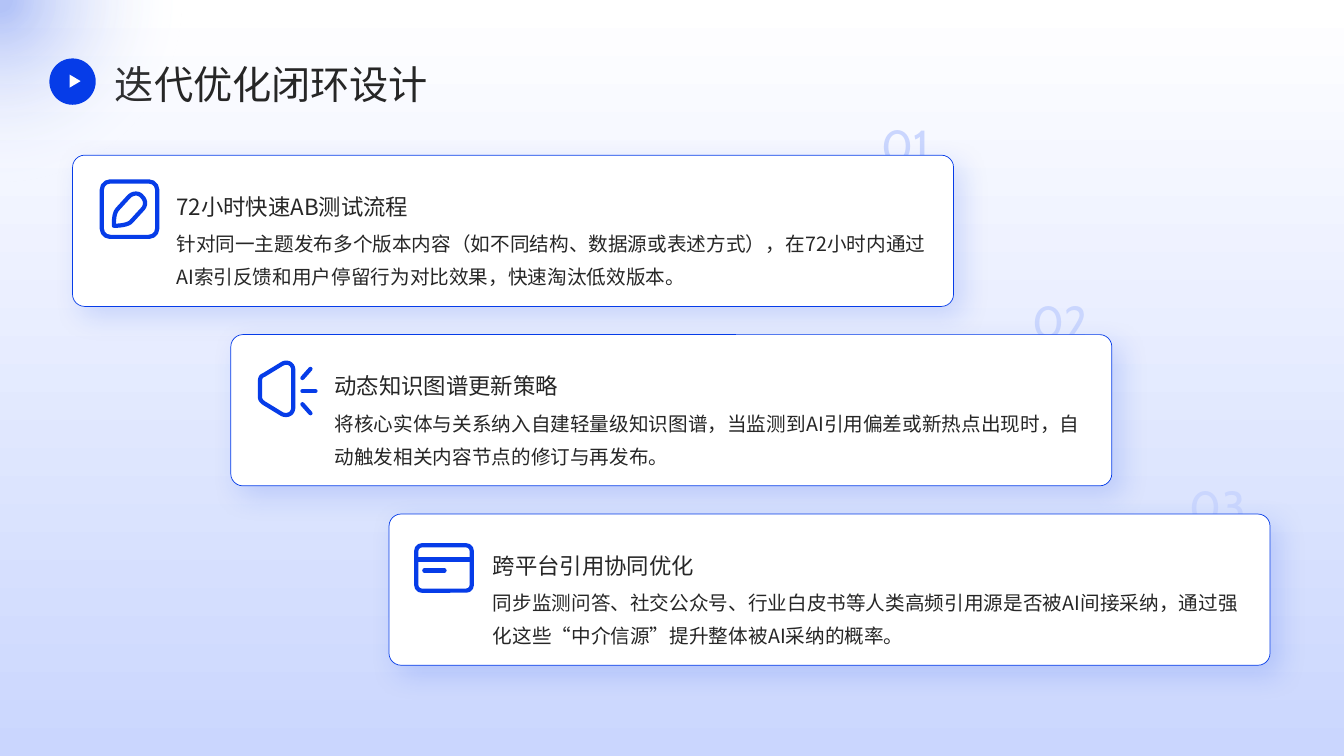
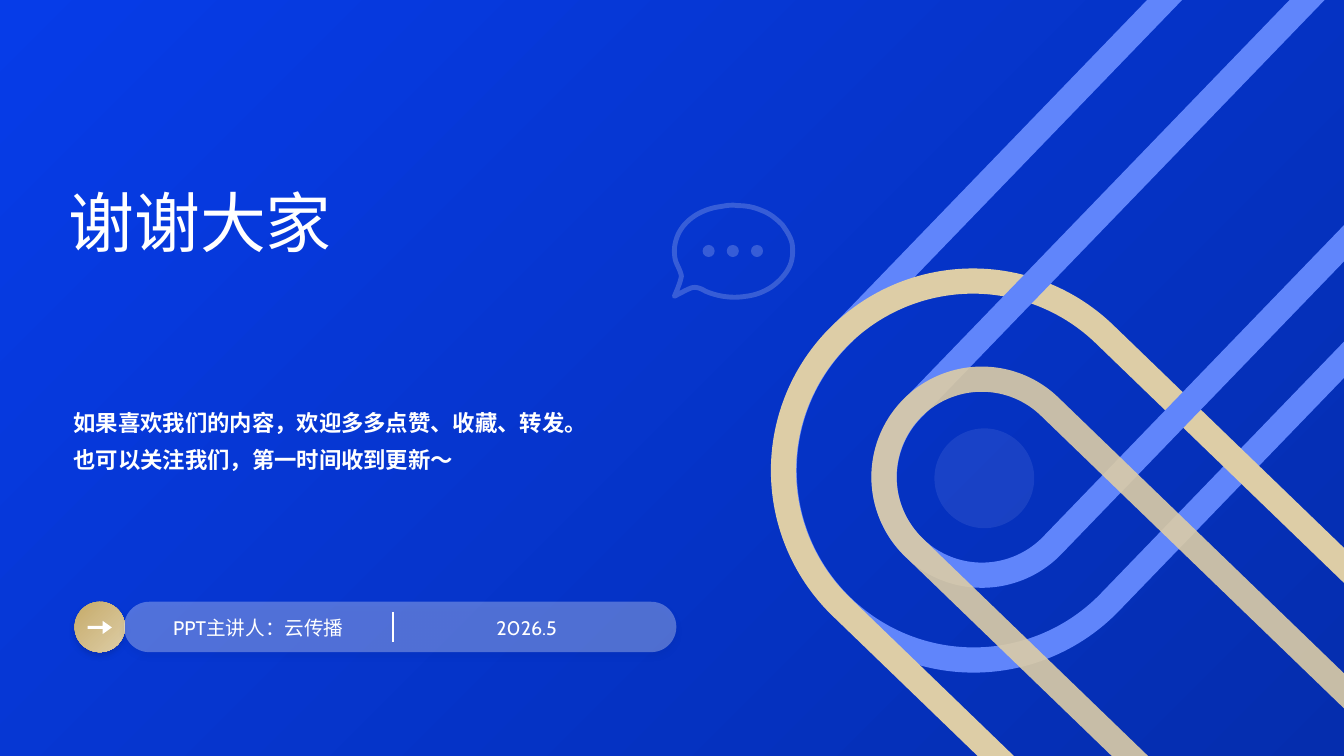
from lxml import etree
from pptx import Presentation
from pptx import util as u
from pptx.dml.color import RGBColor
from pptx.enum import shapes, text
from pptx.enum.lang import MSO_LANGUAGE_ID
from pptx.oxml import parse_xml
from pptx.oxml.ns import nsdecls, qn

BLUE, NAVY, SKY, PALE = "063CE8", "052DAE", "6085FB", "CAD6FE"
GOLD, BRONZE, SHADE = "DDCDA6", "C6AB6A", "031E74"
WHITE, INK = "FFFFFF", "262626"
CJK, LATIN = "Noto Sans CJK SC", "Cabin"
MS, AL, AN = shapes.MSO_SHAPE, text.PP_ALIGN, text.MSO_ANCHOR
CARD_SHADOW = (BLUE, 15, 20, 8, 45)
PILL_SHADOW = (SHADE, 25, 4, 3, 90)

CARD = (72, 154, 874, 150)
CARD_STEP = (157, 178)
CARDS = [
    {"no": "01", "no_top": 113, "title": "72小时快速AB测试流程",
     "body": "针对同一主题发布多个版本内容（如不同结构、数据源或表述方式），在72小时内通过AI索引反馈和用户停留行为对比效果，快速淘汰低效版本。",
     "frame": (29, 26, 55, 55, 0.15),
     "outline": [(41, 70), (41, 65, 41, 57, 45, 53), (56, 41), (60, 37, 66, 37, 69, 41),
                 (73, 45, 73, 50, 69, 54), (58, 66), (55, 69, 47, 70, 41, 70)]},
    {"no": "02", "no_top": 288, "title": "动态知识图谱更新策略",
     "body": "将核心实体与关系纳入自建轻量级知识图谱，当监测到AI引用偏差或新热点出现时，自动触发相关内容节点的修订与再发布。",
     "outline": [(33, 40), (51, 29), (56, 26, 62, 29, 62, 35), (62, 72),
                 (62, 79, 56, 81, 51, 79), (33, 68), (30, 66, 29, 64, 29, 62),
                 (29, 46), (29, 43, 30, 41, 33, 40)],
     "strokes": [(71, 69, 79, 78), (71, 56, 84, 56), (71, 43, 79, 34)]},
    {"no": "03", "no_top": 471, "title": "跨平台引用协同优化",
     "body": "同步监测问答、社交公众号、行业白皮书等人类高频引用源是否被AI间接采纳，通过强化这些“中介信源”提升整体被AI采纳的概率。",
     "frame": (27, 31, 55, 45, 0.12),
     "strokes": [(29, 45, 80, 45), (35, 56, 55, 56)]},
]

LOOPS = [
    ((979, -219, 376, 955), 224, SKY, 100),
    ((923, 217, 376, 781), 314, GOLD, 100),
    ((1054, -61, 194, 703), 224, SKY, 100),
    ((1014, 318, 194, 575), 314, GOLD, 90),
]
BUBBLE = [
    (669, 294), (672, 287, 675, 280, 676, 274), (675, 268, 671, 262, 670, 258),
    (668, 249, 669, 241, 673, 232), (677, 224, 683, 218, 691, 213),
    (698, 209, 706, 206, 715, 205), (720, 204, 726, 203, 731, 204),
    (742, 204, 749, 206, 756, 209), (764, 212, 770, 217, 776, 223),
    (781, 230, 785, 236, 786, 243), (787, 252, 786, 260, 782, 267),
    (778, 274, 772, 280, 765, 285), (757, 290, 749, 293, 740, 294),
    (728, 296, 714, 295, 700, 289), (695, 286, 690, 284, 685, 286),
    (680, 288, 675, 291, 669, 294),
]
FOOTER = [(153, "PPT主讲人：云传播"), (419, "2026.5")]


def px(v):
    return u.Emu(round(v * 9144))


def rgb(color):
    return RGBColor.from_string(color)


def fade(clr, alpha):
    etree.SubElement(clr, qn("a:alpha")).set("val", str(alpha * 1000))


def gradient(fill, start, end, angle):
    fill.gradient()
    fill.gradient_angle = 360 - angle
    for stop, color in zip(fill.gradient_stops, (start, end)):
        stop.color.rgb = rgb(color)


def stroke(sp, color, width, alpha=100, rounded=False):
    sp.line.width = u.Pt(width)
    sp.line.fill.solid()
    sp.line.fill.fore_color.rgb = rgb(color)
    ln = sp._element.spPr.find(qn("a:ln"))
    if alpha < 100:
        fade(ln.find(".//" + qn("a:srgbClr")), alpha)
    if rounded:
        ln.set("cap", "rnd")
        etree.SubElement(ln, qn("a:round"))


def paint(sp, fill=None, alpha=100, shadow=None):
    if fill:
        sp.fill.solid()
        sp.fill.fore_color.rgb = rgb(fill)
        if alpha < 100:
            fade(sp._element.spPr.find(qn("a:solidFill") + "/" + qn("a:srgbClr")), alpha)
    else:
        sp.fill.background()
    sp.line.fill.background()
    sp.shadow.inherit = False
    if shadow:
        color, opacity, blur, dist, angle = shadow
        sp._element.spPr.find(qn("a:effectLst")).append(parse_xml(
            f'<a:outerShdw {nsdecls("a")} blurRad="{u.Pt(blur)}" dist="{u.Pt(dist)}" '
            f'dir="{angle * 60000}" algn="tl" rotWithShape="0"><a:srgbClr val="{color}">'
            f'<a:alpha val="{opacity * 1000}"/></a:srgbClr></a:outerShdw>'))


def shape(s, kind, box, fill=None, alpha=100, adj=(), rot=0, shadow=None):
    sp = s.shapes.add_shape(kind, *map(px, box))
    for i, value in enumerate(adj):
        sp.adjustments[i] = value
    sp.rotation = rot
    paint(sp, fill, alpha, shadow)
    return sp


def line(s, ends, color, width, rounded=False):
    cx = s.shapes.add_connector(shapes.MSO_CONNECTOR.STRAIGHT, *map(px, ends))
    stroke(cx, color, width, rounded=rounded)
    etree.SubElement(cx._element.spPr, qn("a:effectLst"))


def outline(s, path, color, width, dx=0, dy=0, alpha=100, steps=10):
    points = [path[0]]
    for part in path[1:]:
        if len(part) == 2:
            points.append(part)
            continue
        bezier = (points[-1], part[:2], part[2:4], part[4:])
        for k in range(1, steps + 1):
            t = k / steps
            weights = ((1 - t) ** 3, 3 * t * (1 - t) ** 2, 3 * t * t * (1 - t), t ** 3)
            points.append(tuple(sum(w * q[i] for w, q in zip(weights, bezier)) for i in (0, 1)))
    spots = [(px(x + dx), px(y + dy)) for x, y in points]
    fb = s.shapes.build_freeform(*spots[0])
    fb.add_line_segments(spots[1:], close=True)
    sp = fb.convert_to_shape()
    paint(sp)
    stroke(sp, color, width, alpha, True)


def write(sp, box, content, size, font=CJK, color=INK, align=AL.LEFT,
          anchor=AN.TOP, spacing=1.1, bold=False):
    sp.left, sp.top, sp.width, sp.height = map(px, box)
    tf = sp.text_frame
    tf.word_wrap = True
    tf.auto_size = text.MSO_AUTO_SIZE.NONE
    tf.vertical_anchor = anchor
    tf.margin_left = tf.margin_top = tf.margin_right = tf.margin_bottom = 0
    p = tf.paragraphs[0]
    pPr = p._p.get_or_add_pPr()
    pPr.set("marL", "0")
    pPr.set("indent", "0")
    etree.SubElement(pPr, qn("a:buNone"))
    p.alignment = align
    p.line_spacing = spacing
    p.space_before = u.Pt(0)
    r = p.add_run()
    r.text = content
    r.font.size = u.Pt(size)
    r.font.bold = bold
    r.font.name = font
    r.font.color.rgb = rgb(color)
    r.font.language_id = MSO_LANGUAGE_ID.SIMPLIFIED_CHINESE
    r.font._element.find(qn("a:latin")).addnext(
        parse_xml(f'<a:ea {nsdecls("a")} typeface="{CJK}"/>'))


def label(s, box, content, size, **fmt):
    write(s.shapes.add_textbox(0, 0, 0, 0), box, content, size, **fmt)


def new_slide(prs, layout, start, end, angle):
    s = prs.slides.add_slide(prs.slide_layouts[layout])
    gradient(s.background.fill, start, end, angle)
    return s


def corner_glow(s):
    sp = shape(s, MS.OVAL, (-180, -180, 360, 360))
    gradient(sp.fill, BLUE, WHITE, 0)
    grad = sp._element.spPr.find(qn("a:gradFill"))
    for gs, pos, alpha in zip(grad.iter(qn("a:gs")), (4, 72), (30, 0)):
        gs.set("pos", str(pos * 1000))
        fade(gs[0], alpha)
    lin = grad.find(qn("a:lin"))
    grad.replace(lin, parse_xml(
        f'<a:path {nsdecls("a")} path="circle"><a:fillToRect l="50000" t="50000" '
        'r="50000" b="50000"/></a:path>'))


def card(s, index, item):
    x, y = (CARD[i] + index * CARD_STEP[i] for i in (0, 1))
    label(s, (x + 759, item["no_top"], 91, 57), item["no"], 32, font=LATIN, color=PALE,
          align=AL.RIGHT, anchor=AN.BOTTOM, spacing=1.3)
    sp = shape(s, MS.ROUNDED_RECTANGLE, (x, y, *CARD[2:]), WHITE, adj=[0.08],
               shadow=CARD_SHADOW)
    stroke(sp, BLUE, 0.5)
    label(s, (x + 103, y + 24, 748, 40), item["title"], 16, anchor=AN.BOTTOM, spacing=1.3)
    label(s, (x + 103, y + 67, 748, 59), item["body"], 14, spacing=1.4)
    if "frame" in item:
        fx, fy, w, h, radius = item["frame"]
        sp = shape(s, MS.ROUNDED_RECTANGLE, (x + fx, y + fy, w, h), adj=[radius])
        stroke(sp, BLUE, 3)
    if "outline" in item:
        outline(s, item["outline"], BLUE, 3, x, y)
    for x1, y1, x2, y2 in item.get("strokes", []):
        line(s, (x + x1, y + y1, x + x2, y + y2), BLUE, 3, rounded=True)


def loop_slide(prs):
    s = new_slide(prs, 5, WHITE, PALE, 90)
    corner_glow(s)
    for index, item in enumerate(CARDS):
        card(s, index, item)
    write(s.shapes.title, (114, 57, 1145, 47), "迭代优化闭环设计", 28, anchor=AN.MIDDLE)
    shape(s, MS.OVAL, (49, 58, 46, 46), BLUE)
    shape(s, MS.ISOSCELES_TRIANGLE, (68, 75, 13, 11), WHITE, rot=90)


def closing_slide(prs):
    s = new_slide(prs, 1, BLUE, NAVY, 45)
    for box, rot, color, alpha in LOOPS:
        sp = shape(s, MS.ROUND_2_SAME_RECTANGLE, box, adj=[0.5, 0], rot=rot)
        stroke(sp, color, 18, alpha)
    shape(s, MS.OVAL, (927, 425, 99, 99), PALE, alpha=10)
    disc = shape(s, MS.OVAL, (74, 597, 50, 50), GOLD, shadow=PILL_SHADOW)
    gradient(disc.fill, BRONZE, GOLD, 45)
    shape(s, MS.RIGHT_ARROW, (87, 616, 24, 13), WHITE, adj=[0.24, 0.7])
    shape(s, MS.ROUNDED_RECTANGLE, (123, 597, 548, 50), WHITE, alpha=30, adj=[0.5],
          shadow=PILL_SHADOW)
    for x, content in FOOTER:
        label(s, (x, 605, 207, 34), content, 14, font=LATIN, color=WHITE,
              align=AL.CENTER, anchor=AN.MIDDLE)
    line(s, (390, 607, 390, 637), WHITE, 1)
    outline(s, BUBBLE, WHITE, 3.5, alpha=20)
    for i in range(3):
        shape(s, MS.OVAL, (697 + 24 * i, 243, 12, 12), WHITE, alpha=20)
    write(s.shapes.title, (68, 69, 644, 294), "谢谢大家", 47, font=LATIN, color=WHITE,
          anchor=AN.MIDDLE)
    write(s.placeholders[1], (73, 395, 512, 59),
          "如果喜欢我们的内容，欢迎多多点赞、收藏、转发。也可以关注我们，第一时间收到更新～",
          16, color=WHITE, spacing=1.4, bold=True)


def main():
    prs = Presentation()
    prs.slide_width, prs.slide_height = u.Emu(12192000), px(750)
    loop_slide(prs)
    closing_slide(prs)
    prs.save("out.pptx")


if __name__ == "__main__":
    main()
